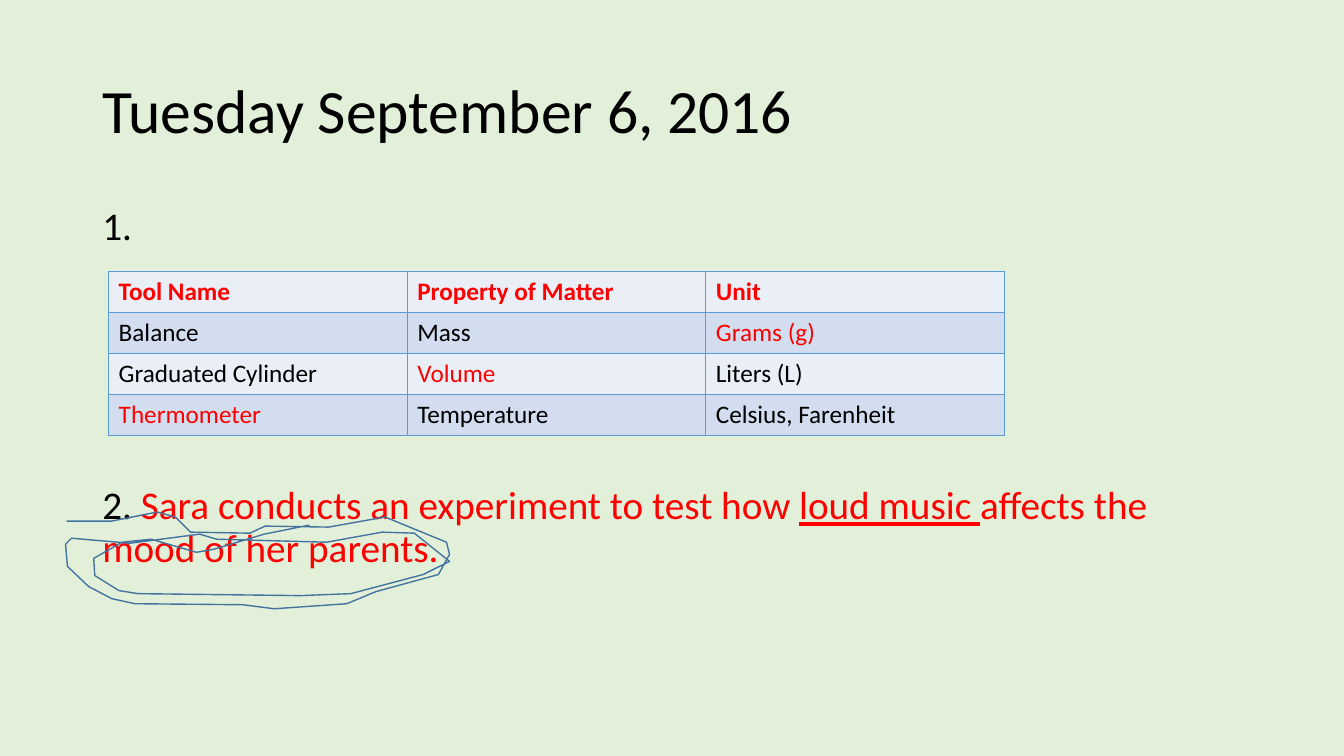
import dataclasses
import pptx
import pptx.dml.color
import pptx.enum.text
import pptx.oxml
import pptx.oxml.ns
import pptx.util

Pt = pptx.util.Pt


@dataclasses.dataclass(frozen=True)
class Theme:
    """Hold the colours and type sizes of the slide."""
    font: str = "Calibri"
    page: str = "E2F0D9"
    ink: str = "000000"
    answer: str = "FF0000"
    bands: tuple = ("EAEFF7", "D2DEEF")
    border: str = "5B9BD5"
    scribble: str = "43739E"
    title: int = 44
    body: int = 28
    cell: int = 18


THEME = Theme()

TOOLS = (
    ("Tool Name", "Property of Matter", "Unit"),
    ("Balance", "Mass", "Grams (g)"),
    ("Graduated Cylinder", "Volume", "Liters (L)"),
    ("Thermometer", "Temperature", "Celsius, Farenheit"),
)
ANSWERS = {*TOOLS[0], "Grams (g)", "Volume", "Thermometer"}

SCRIBBLE_UNIT = Pt(0.72)
SCRIBBLE = (
    (307, 521), (262, 530), (212, 545), (195, 548), (150, 535), (121, 538),
    (93, 554), (94, 571), (118, 586), (137, 589), (298, 591), (348, 589),
    (420, 570), (446, 557), (411, 529), (379, 528), (324, 538), (215, 535),
    (198, 530), (129, 539), (71, 534), (65, 540), (67, 562), (88, 582),
    (111, 594), (134, 599), (241, 600), (272, 604), (344, 599), (373, 587),
    (435, 570), (446, 550), (443, 538), (382, 513), (326, 523), (263, 522),
    (248, 529), (189, 528), (174, 513), (156, 508), (111, 517), (66, 517),
)


def colour(code):
    """Turn a hex code into a colour."""
    return pptx.dml.color.RGBColor.from_string(code)


def apply(target, values):
    """Set each named attribute on the target."""
    for name, value in values.items():
        setattr(target, name, value)


def add_span(para, text, size, code, **extra):
    """Append a formatted run to a paragraph."""
    span = para.add_run()
    span.text = text
    apply(span.font, {"name": THEME.font, "size": Pt(size), **extra})
    span.font.color.rgb = colour(code)


def add_box(page, place, anchor):
    """Add a wrapping text box and return its frame."""
    frame = page.shapes.add_textbox(*map(Pt, place)).text_frame
    apply(frame, {"word_wrap": True, "vertical_anchor": anchor})
    return frame


def fill_para(para, before, size, spans):
    """Set paragraph spacing and add its spans."""
    apply(para, {"line_spacing": 0.9, "space_before": Pt(before)})
    for text, code, extra in spans:
        add_span(para, text, size, code, **extra)


def add_borders(cell):
    """Draw a thin line on the four sides of a cell."""
    properties = cell._tc.get_or_add_tcPr()
    for position, side in enumerate(("lnL", "lnR", "lnT", "lnB")):
        properties.insert(position, pptx.oxml.parse_xml(
            f'<a:{side} {pptx.oxml.ns.nsdecls("a")} w="{Pt(1)}"><a:solidFill>'
            f'<a:srgbClr val="{THEME.border}"/></a:solidFill></a:{side}>'))


def add_tool_table(page):
    """Add the banded table of measuring tools."""
    column_width, row_height = 213.3, 29.25
    table = page.shapes.add_table(
        len(TOOLS), len(TOOLS[0]), Pt(77.6), Pt(194),
        Pt(column_width * len(TOOLS[0])), Pt(row_height * len(TOOLS))).table
    for column in table.columns:
        column.width = Pt(column_width)
    for index, texts in enumerate(TOOLS):
        table.rows[index].height = Pt(row_height)
        for cell, text in zip(table.rows[index].cells, texts):
            cell.fill.solid()
            cell.fill.fore_color.rgb = colour(THEME.bands[index % 2])
            add_borders(cell)
            code = THEME.answer if text in ANSWERS else THEME.ink
            add_span(cell.text_frame.paragraphs[0], text, THEME.cell, code,
                     bold=index == 0)


def add_scribble(page):
    """Draw the hand-made loop around the last words."""
    builder = page.shapes.build_freeform(*SCRIBBLE[0], scale=SCRIBBLE_UNIT)
    builder.add_line_segments(SCRIBBLE[1:], close=False)
    loop = builder.convert_to_shape()
    loop.shadow.inherit = False
    loop.fill.background()
    loop.line.color.rgb = colour(THEME.scribble)
    loop.line.width = Pt(1)


def main():
    """Build the slide and save it."""
    deck = pptx.Presentation()
    apply(deck, {"slide_width": Pt(960), "slide_height": Pt(540)})
    page = deck.slides.add_slide(deck.slide_layouts[6])
    page.background.fill.solid()
    page.background.fill.fore_color.rgb = colour(THEME.page)

    anchors = pptx.enum.text.MSO_ANCHOR
    title = add_box(page, (66, 28.75, 828, 104.4), anchors.MIDDLE)
    fill_para(title.paragraphs[0], 0, THEME.title,
              [("Tuesday September 6, 2016", THEME.ink, {})])

    body = add_box(page, (66, 143.75, 828, 342.6), anchors.TOP)
    fill_para(body.paragraphs[0], 10, THEME.body, [("1.", THEME.ink, {})])
    fill_para(body.add_paragraph(), 169.5, THEME.body, [
        ("2.", THEME.ink, {}),
        (" Sara conducts an experiment to test how ", THEME.answer, {}),
        ("loud music ", THEME.answer, {"underline": True}),
        ("affects the mood of her parents.", THEME.answer, {}),
    ])

    add_tool_table(page)
    add_scribble(page)
    deck.save("out.pptx")


if __name__ == "__main__":
    main()
